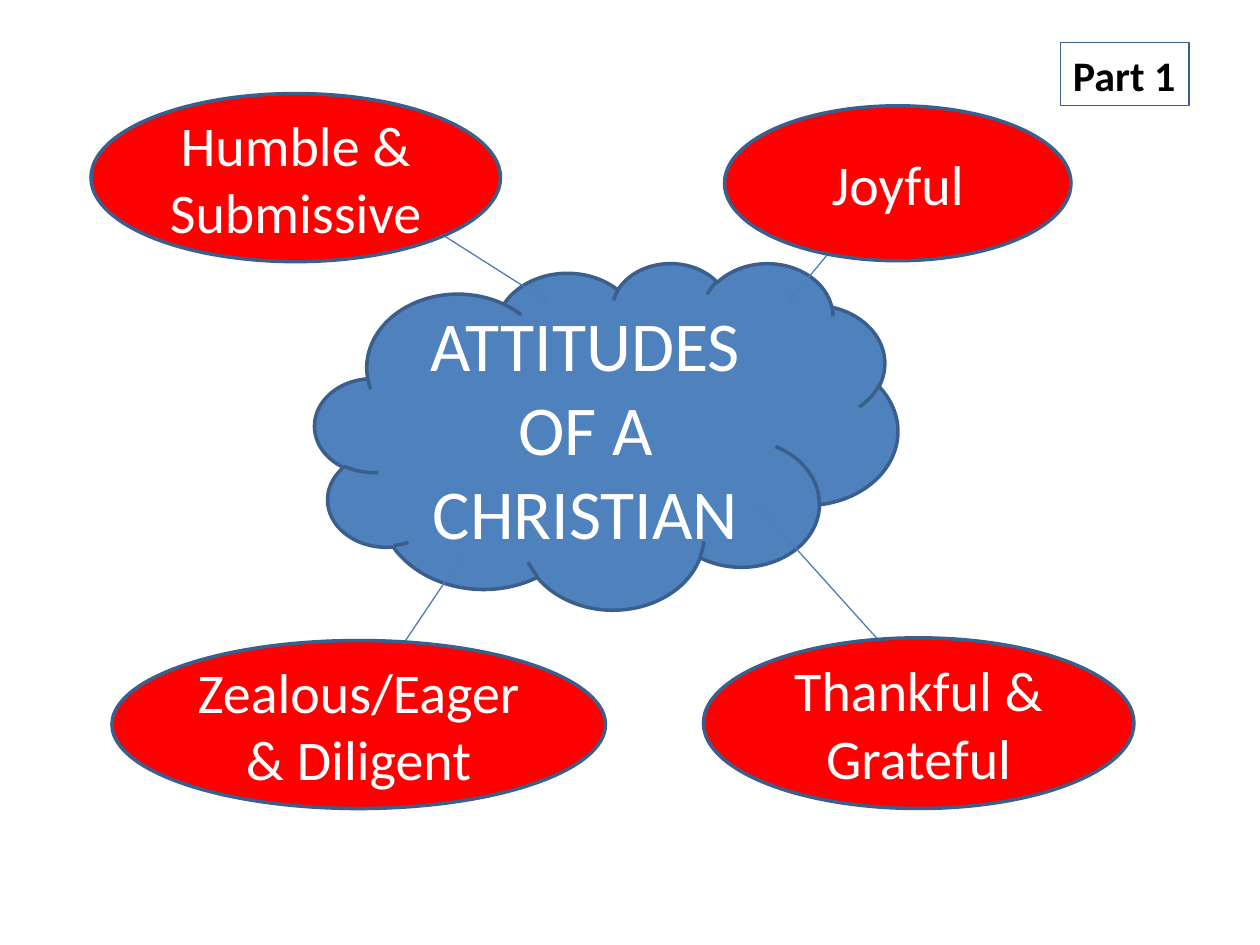
"""Build a slide with a central cloud and four attitudes linked to it by arrows."""
import pptx
import pptx.util
import pptx.dml.color
import pptx.enum.shapes
import pptx.enum.text
import lxml.etree

Pt = pptx.util.Pt
MSO_SHAPE = pptx.enum.shapes.MSO_SHAPE
DRAWING_NS = "{http://schemas.openxmlformats.org/drawingml/2006/main}"
COLORS = {"cloud": "4F81BD", "attitude": "FF0000", "outline": "3A5F8C",
          "arrow": "4B7EBC", "light": "FFFFFF", "dark": "000000"}


def rgb(name):
    return pptx.dml.color.RGBColor.from_string(COLORS[name])


def add_bubble(preset, box, fill, text, size):
    bubble = slide.shapes.add_shape(preset, *[Pt(length) for length in box])
    bubble.shadow.inherit = False
    bubble.fill.solid()
    bubble.fill.fore_color.rgb = rgb(fill)
    bubble.line.color.rgb = rgb("outline")
    bubble.line.width = Pt(2)
    frame = bubble.text_frame
    frame.word_wrap = True
    frame.vertical_anchor = pptx.enum.text.MSO_ANCHOR.MIDDLE
    frame.text = text
    paragraph = frame.paragraphs[0]
    paragraph.alignment = pptx.enum.text.PP_ALIGN.CENTER
    paragraph.font.name = "Calibri"
    paragraph.font.size = Pt(size)
    paragraph.font.color.rgb = rgb("light")


presentation = pptx.Presentation()
presentation.slide_width = Pt(720)
presentation.slide_height = Pt(540)
slide = presentation.slides.add_slide(presentation.slide_layouts[6])

add_bubble(MSO_SHAPE.CLOUD, (180, 150, 333, 198), "cloud", "ATTITUDES OF A CHRISTIAN", 40)

attitudes = [
    ("Humble & Submissive", (52, 53.5, 234, 96), (240, 126, 314, 173)),
    ("Zealous/Eager & Diligent", (64, 366, 282, 96), (264, 318, 216, 389.5)),
    ("Joyful", (414, 60.5, 198, 88.5), (489, 126, 450, 173)),
    ("Thankful & Grateful", (402, 364.5, 246, 97.5), (432, 288, 513, 378)),
]
for attitude, box, ends in attitudes:
    arrow = slide.shapes.add_connector(
        pptx.enum.shapes.MSO_CONNECTOR.STRAIGHT, *[Pt(length) for length in ends])
    arrow.line.color.rgb = rgb("arrow")
    arrow.line.width = Pt(0.75)
    lxml.etree.SubElement(arrow.line._get_or_add_ln(), DRAWING_NS + "tailEnd", type="arrow")
    lxml.etree.SubElement(arrow._element.spPr, DRAWING_NS + "effectLst")
    add_bubble(MSO_SHAPE.OVAL, box, "attitude", attitude, 32)

part = slide.shapes.add_textbox(Pt(606), Pt(24.5), Pt(73.5), Pt(36))
part.line.color.rgb = rgb("outline")
part.line.width = Pt(0.75)
part.text_frame.word_wrap = False
part.text_frame.auto_size = pptx.enum.text.MSO_AUTO_SIZE.SHAPE_TO_FIT_TEXT
part.text_frame.text = "Part 1"
part_font = part.text_frame.paragraphs[0].font
part_font.name = "Calibri"
part_font.size = Pt(24)
part_font.bold = True
part_font.color.rgb = rgb("dark")

presentation.save("out.pptx")
